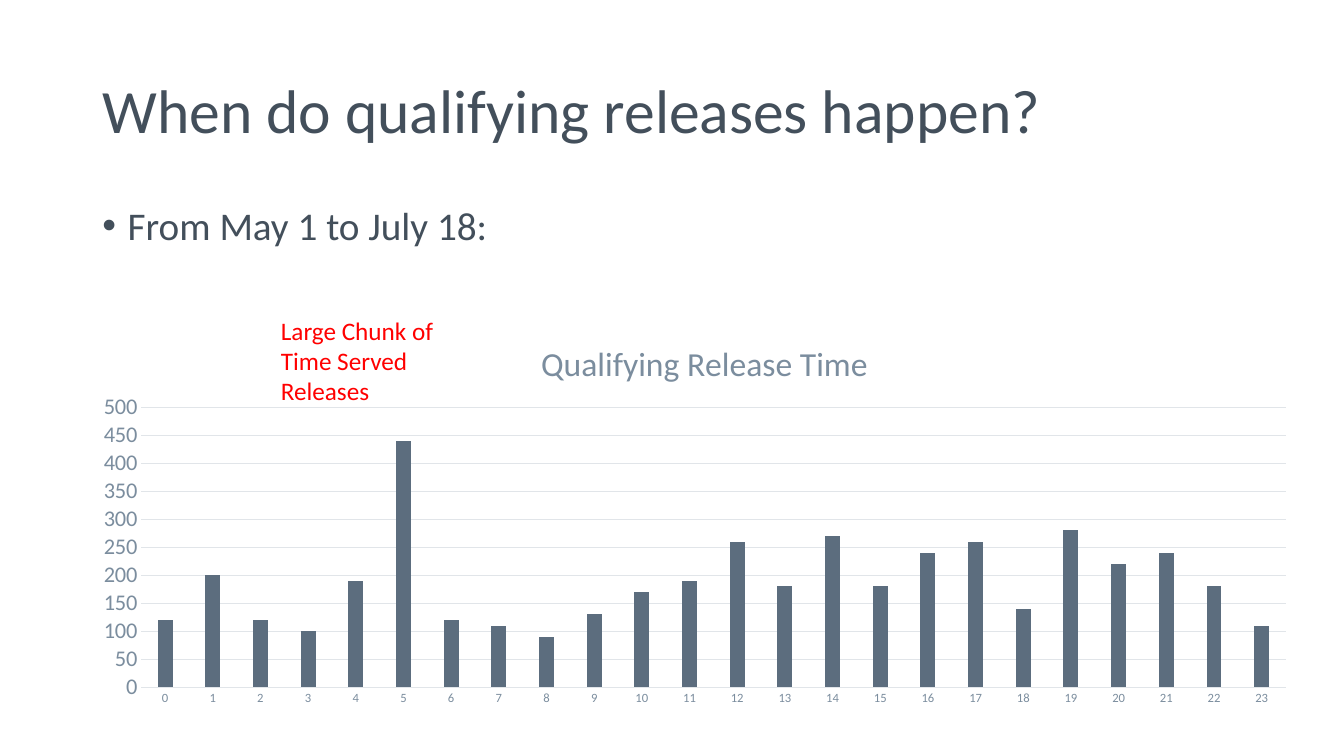
from dataclasses import dataclass

from lxml import etree
from pptx import Presentation
from pptx.chart.data import CategoryChartData
from pptx.dml.color import RGBColor
from pptx.enum.chart import XL_CHART_TYPE, XL_TICK_MARK
from pptx.enum.text import MSO_ANCHOR, MSO_AUTO_SIZE, PP_ALIGN
from pptx.oxml.ns import qn
from pptx.util import Cm, Pt

COLUMNS = XL_CHART_TYPE.COLUMN_CLUSTERED
NO_TICK = XL_TICK_MARK.NONE
MIDDLE = MSO_ANCHOR.MIDDLE
TOP = MSO_ANCHOR.TOP
NO_FIT = MSO_AUTO_SIZE.NONE
GROW = MSO_AUTO_SIZE.SHAPE_TO_FIT_TEXT
LEFT = PP_ALIGN.LEFT


@dataclass(frozen=True)
class Theme:
    font: str = "Calibri"
    text: RGBColor = RGBColor(0x43, 0x4F, 0x5B)
    muted: RGBColor = RGBColor(0x7B, 0x8D, 0x9E)
    column: RGBColor = RGBColor(0x5C, 0x6D, 0x7E)
    grid: RGBColor = RGBColor(0xE1, 0xE5, 0xE9)
    alert: RGBColor = RGBColor(0xFF, 0x00, 0x00)
    title_size: Pt = Pt(44)
    body_size: Pt = Pt(28)
    chart_title_size: Pt = Pt(24)
    note_size: Pt = Pt(18)
    value_size: Pt = Pt(16)
    hour_size: Pt = Pt(9)
    line_width: Pt = Pt(0.75)


theme = Theme()


def style(font, size, color):
    font.name = theme.font
    font.size = size
    font.bold = False
    font.color.rgb = color


def place(parent, **fractions):
    """Give a chart part a fixed layout, as fractions of the chart."""
    layout = parent.find(qn("c:layout"))
    if layout is None:
        layout = etree.Element(qn("c:layout"))
        text = parent.find(qn("c:tx"))
        parent.insert(0 if text is None else 1, layout)
    manual = etree.SubElement(layout, qn("c:manualLayout"))
    if "w" in fractions:
        etree.SubElement(manual, qn("c:layoutTarget")).set("val", "inner")
    for side in ("x", "y"):
        etree.SubElement(manual, qn(f"c:{side}Mode")).set("val", "edge")
    for name, fraction in fractions.items():
        etree.SubElement(manual, qn(f"c:{name}")).set("val", str(fraction))


presentation = Presentation()
presentation.slide_width = Cm(33.87)
presentation.slide_height = Cm(19.05)
slide = presentation.slides.add_slide(presentation.slide_layouts[5])

# Title
title = slide.shapes.title
title.left, title.top, title.width, title.height = Cm(2.33), Cm(1.01), Cm(29.21), Cm(3.68)
title.text_frame.text = "When do qualifying releases happen?"
title.text_frame.vertical_anchor = MIDDLE
title.text_frame.auto_size = NO_FIT
paragraph = title.text_frame.paragraphs[0]
paragraph.alignment = LEFT
paragraph.line_spacing = 0.9
style(paragraph.font, theme.title_size, theme.text)

# Bulleted period
period = slide.shapes.add_textbox(Cm(2.33), Cm(5.07), Cm(29.21), Cm(12.09))
period.text_frame.word_wrap = True
period.text_frame.vertical_anchor = TOP
paragraph = period.text_frame.paragraphs[0]
paragraph.text = "From May 1 to July 18:"
paragraph.line_spacing = 0.9
paragraph.space_before = Pt(10)
style(paragraph.font, theme.body_size, theme.text)
properties = paragraph._p.get_or_add_pPr()
properties.set("marL", str(Cm(0.64)))
properties.set("indent", str(Cm(-0.64)))
spacing = properties.find(qn("a:spcBef"))
bullet = etree.Element(qn("a:buChar"), char="•")
bullet_font = etree.Element(qn("a:buFont"), typeface="Arial")
spacing.addnext(bullet_font)
bullet_font.addnext(bullet)

# Releases by hour of the day
releases = [120, 200, 120, 100, 190, 440, 120, 110, 90, 130, 170, 190,
            260, 180, 270, 180, 240, 260, 140, 280, 220, 240, 180, 110]
data = CategoryChartData()
data.categories = [str(hour) for hour in range(len(releases))]
data.add_series("Series 1", releases)
chart = slide.shapes.add_chart(COLUMNS, Cm(2.01), Cm(7.82), Cm(31.01), Cm(10.21), data).chart
style(chart.font, Pt(10), theme.text)
chart.has_legend = False
chart.has_title = True
chart.chart_title.text_frame.text = "Qualifying Release Time"
style(chart.chart_title.text_frame.paragraphs[0].font, theme.chart_title_size, theme.muted)
chart.chart_title.include_in_layout = False
place(chart.chart_title._element, x=0.37, y=0.06)

plot = chart.plots[0]
plot.gap_width = 219
plot.overlap = -27
plot.vary_by_categories = False
plot.series[0].format.fill.solid()
plot.series[0].format.fill.fore_color.rgb = theme.column
place(chart._chartSpace.chart.plotArea, x=0.05, y=0.24, w=0.93, h=0.69)

# Axes
for axis, size in ((chart.category_axis, theme.hour_size), (chart.value_axis, theme.value_size)):
    axis.major_tick_mark = NO_TICK
    axis.minor_tick_mark = NO_TICK
    style(axis.tick_labels.font, size, theme.muted)
chart.value_axis.minimum_scale = 0
chart.value_axis.maximum_scale = 500
chart.value_axis.major_unit = 50
chart.value_axis.format.line.fill.background()
for line in (chart.category_axis.format.line, chart.value_axis.major_gridlines.format.line):
    line.color.rgb = theme.grid
    line.width = theme.line_width

# Note above the peak
note = slide.shapes.add_textbox(Cm(6.83), Cm(7.82), Cm(5.61), Cm(2.57))
note.text_frame.word_wrap = True
note.text_frame.auto_size = GROW
paragraph = note.text_frame.paragraphs[0]
paragraph.text = "Large Chunk of Time Served Releases"
style(paragraph.font, theme.note_size, theme.alert)

presentation.save("out.pptx")
